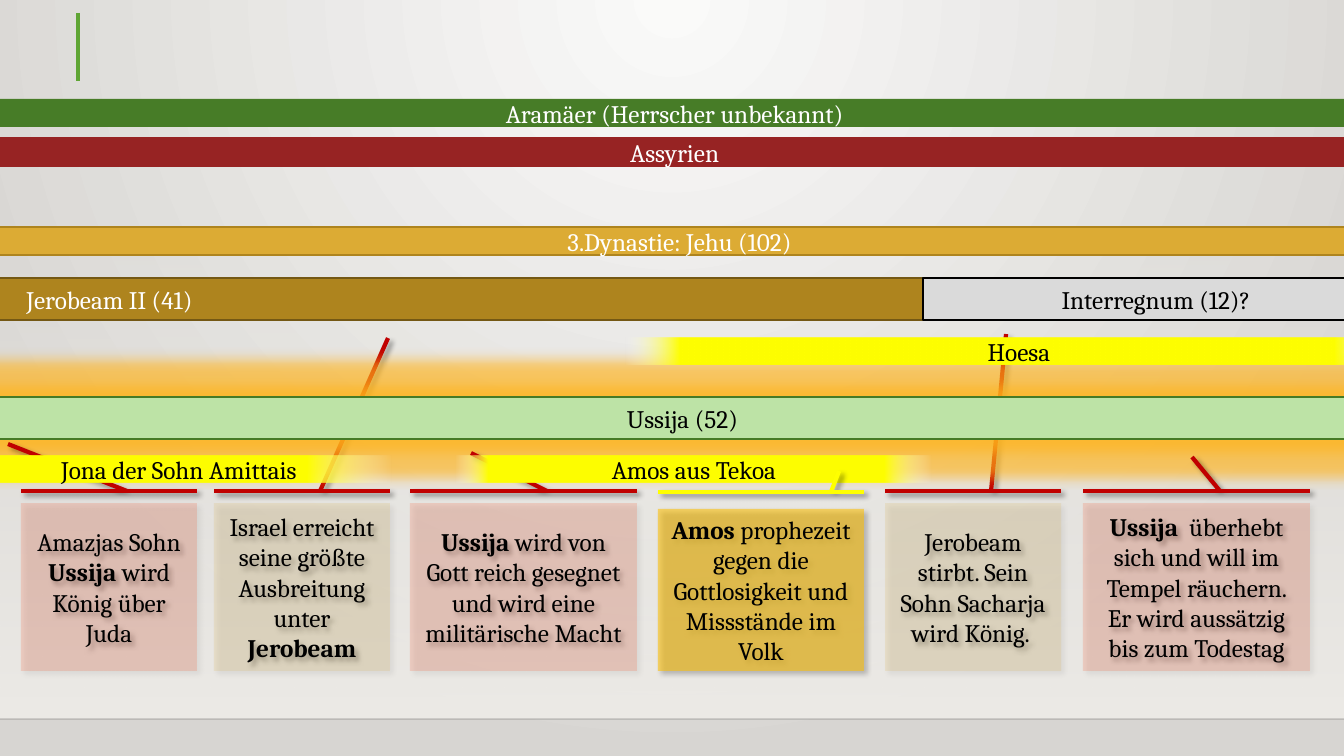
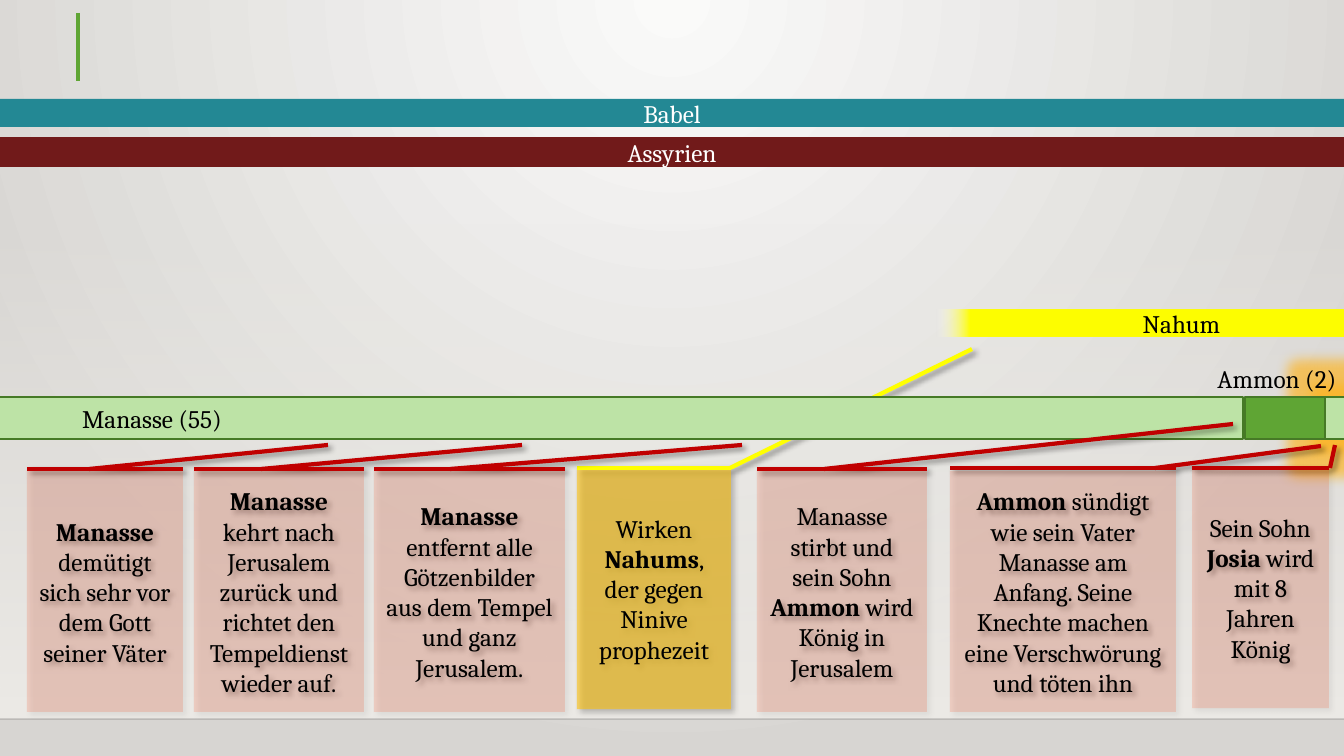
from dataclasses import dataclass

from lxml.etree import SubElement
from pptx import Presentation
from pptx.dml.color import RGBColor
from pptx.enum.shapes import MSO_CONNECTOR, MSO_SHAPE
from pptx.enum.text import MSO_ANCHOR, PP_ALIGN
from pptx.oxml import parse_xml
from pptx.oxml.ns import nsdecls, qn
from pptx.util import Pt

WIDTH, HEIGHT = 1344, 756
SCALE = 12192000 / WIDTH


@dataclass(frozen=True)
class Theme:
    font: str = "Cambria"
    text_size: float = 18
    bar_line: float = 1.25
    accent_line: float = 3
    black: str = "000000"
    white: str = "FFFFFF"
    background_light: str = "FAFAF9"
    background_dark: str = "D7D5D2"
    floor: str = "EDEBE7"
    green: str = "5FA534"
    green_dark: str = "467A26"
    green_light: str = "BDE3A6"
    aram: str = "477C27"
    assyria: str = "972323"
    assyria_dark: str = "711A1A"
    babylon: str = "238894"
    gold: str = "DCAB34"
    gold_dark: str = "AE841E"
    gold_edge: str = "745814"
    grey: str = "DADADA"
    yellow: str = "FFFF00"
    glow: str = "FFB31A"
    red: str = "C00000"


THEME = Theme()
JUDAH = ("FF3300", 15, THEME.red)
ISRAEL = (THEME.gold, 15, THEME.red)
PROPHET = ("FFC000", 56, THEME.yellow)

FADE_RIGHT = [(28, THEME.yellow, 100), (80, THEME.yellow, 100), (100, THEME.white, 0)]
FADE_BOTH = [(0, THEME.white, 0), (7, THEME.yellow, 100),
             (90, THEME.yellow, 100), (100, THEME.white, 0)]


def px(value):
    return round(value * SCALE)


def set_alpha(color_parent, percent):
    color = next(color_parent.iter(qn("a:srgbClr")))
    SubElement(color, qn("a:alpha")).set("val", str(percent * 1000))


def set_gradient(fill, holder, stops, direction):
    fill.gradient()
    stop_xml = "".join(
        f'<a:gs pos="{position * 1000}"><a:srgbClr val="{color}">'
        f'<a:alpha val="{alpha * 1000}"/></a:srgbClr></a:gs>'
        for position, color, alpha in stops)
    gradient = parse_xml(f'<a:gradFill {nsdecls("a")} rotWithShape="1">'
                         f"<a:gsLst>{stop_xml}</a:gsLst>{direction}</a:gradFill>")
    previous = holder.find(qn("a:gradFill"))
    holder.replace(previous, gradient)


def linear(degrees):
    return f'<a:lin ang="{degrees * 60000}" scaled="0"/>'


def add_effect(shape, effect):
    shape.element.spPr.find(qn("a:effectLst")).append(parse_xml(effect))


def write(shape, text, color):
    frame = shape.text_frame
    frame.word_wrap = True
    frame.vertical_anchor = MSO_ANCHOR.MIDDLE
    paragraph = frame.paragraphs[0]
    paragraph.alignment = PP_ALIGN.CENTER
    for index, part in enumerate(text.split("*")):
        if part:
            run = paragraph.add_run()
            run.text = part
            run.font.name = THEME.font
            run.font.size = Pt(THEME.text_size)
            run.font.bold = index % 2 == 1
            run.font.color.rgb = RGBColor.from_string(color)


def set_line(line, color, width):
    line.color.rgb = RGBColor.from_string(color)
    line.width = Pt(width)


def add_plain_shape(shapes, kind, box):
    shape = shapes.add_shape(kind, *map(px, box))
    shape.shadow.inherit = False
    shape.line.fill.background()
    return shape


def add_bar(shapes, box, fill, text="", color=THEME.white, line=None,
            kind=MSO_SHAPE.RECTANGLE):
    bar = add_plain_shape(shapes, kind, box)
    bar.fill.solid()
    bar.fill.fore_color.rgb = RGBColor.from_string(fill)
    if line:
        set_line(bar.line, line, THEME.bar_line)
    write(bar, text, color)
    return bar


def add_reign(shapes, left, width, text="", fill=THEME.green_light):
    return add_bar(shapes, (left, 397, width, 42), fill, text, THEME.black, THEME.green_dark)


def add_glow(shape):
    add_effect(shape, f'<a:glow {nsdecls("a")} rad="{px(25)}"><a:srgbClr val="{THEME.glow}">'
                      '<a:alpha val="65000"/></a:srgbClr></a:glow>')


def add_prophet(shapes, box, text, stops=FADE_BOTH):
    prophet = add_plain_shape(shapes, MSO_SHAPE.RECTANGLE, box)
    set_gradient(prophet.fill, prophet.element.spPr, stops, linear(0))
    write(prophet, text, THEME.black)


def add_event(shapes, style, box, start, tip, text):
    left, top, width, height = box
    fill, alpha, accent = style
    rotated = (left + (width - height) / 2, top + (height - width) / 2, height, width)
    event = add_plain_shape(shapes, MSO_SHAPE.LINE_CALLOUT_1_ACCENT_BAR, rotated)
    event.rotation = 90
    points = (start, tip)
    for index, (x, y) in enumerate(points):
        event.adjustments[2 * index] = (left + width - x) / width
        event.adjustments[2 * index + 1] = (y - top) / height
    event.fill.solid()
    event.fill.fore_color.rgb = RGBColor.from_string(fill)
    set_alpha(event.element.spPr.find(qn("a:solidFill")), alpha)
    set_line(event.line, accent, THEME.accent_line)
    add_effect(event, f'<a:outerShdw {nsdecls("a")} blurRad="{Pt(4)}" dist="{Pt(3)}" '
                      f'dir="2700000" algn="tl" rotWithShape="0"><a:srgbClr val="{THEME.black}">'
                      '<a:alpha val="40000"/></a:srgbClr></a:outerShdw>')
    write(event, text, THEME.black)
    event.text_frame._txBody.bodyPr.set("vert", "vert270")


def add_rule(shapes, start, end, color, width):
    rule = shapes.add_connector(MSO_CONNECTOR.STRAIGHT, *map(px, start + end))
    set_line(rule.line, color, width)
    SubElement(rule.element.spPr, qn("a:effectLst"))
    return rule


def decorate_master(master, slide):
    fill = master.background.fill
    fill.solid()
    stops = [(0, THEME.background_light, 100), (100, THEME.background_dark, 100)]
    holder = next(master.element.iter(qn("p:bgPr")))
    set_gradient(fill, holder, stops, '<a:path path="circle"><a:fillToRect l="43000" t="0" '
                                      'r="43000" b="100000"/></a:path>')
    floor = add_plain_shape(slide.shapes, MSO_SHAPE.RECTANGLE, (0, 222, WIDTH, 497))
    set_gradient(floor.fill, floor.element.spPr,
                 [(0, THEME.floor, 0), (100, THEME.floor, 100)], linear(90))
    edge = add_rule(slide.shapes, (0, 719), (WIDTH, 719), THEME.black, 1)
    set_alpha(edge.element.spPr.find(qn("a:ln")), 20)
    marker = add_rule(slide.shapes, (78, 13), (78, 81), THEME.green, THEME.accent_line)
    for shape in (floor, edge, marker):
        master.shapes.element.append(shape.element)


def build_ussija(shapes):
    top, height, start_y = 503, 168, 491
    add_event(shapes, ISRAEL, (885, top, 176, height), (991, start_y), (1006, 334),
              "Jerobeam stirbt. Sein Sohn Sacharja wird König. ")
    add_event(shapes, ISRAEL, (214, top, 176, height), (320, start_y), (388, 338),
              "Israel erreicht seine größte Ausbreitung unter *Jerobeam*")
    add_bar(shapes, (-704, 278, 1627, 42), THEME.gold_dark, "Jerobeam II (41)",
            line=THEME.gold_edge)
    add_glow(add_reign(shapes, -47, 1459, "Ussija (52)"))
    add_bar(shapes, (923, 278, 466, 42), THEME.grey, "Interregnum (12)?",
            THEME.black, THEME.black)
    add_bar(shapes, (-34, 213, 1441, 56), THEME.gold, "3.Dynastie: Jehu (102)",
            line=THEME.gold_dark, kind=MSO_SHAPE.RIGHT_ARROW)
    add_event(shapes, JUDAH, (21, top, 176, height), (127, start_y), (8, 444),
              "Amazjas Sohn *Ussija *wird König über Juda")
    add_bar(shapes, (-1, 99, 1357, 28), THEME.aram, "Aramäer (Herrscher unbekannt) ")
    add_bar(shapes, (-1, 138, 1357, 28), THEME.assyria, "Assyrien ", line=THEME.assyria)
    add_prophet(shapes, (-33, 456, 424, 27), "Jona der Sohn Amittais", FADE_RIGHT)
    add_event(shapes, JUDAH, (410, top, 227, height), (547, start_y), (471, 453),
              "*Ussija *wird von Gott reich gesegnet und wird eine militärische Macht")
    add_prophet(shapes, (456, 456, 476, 27), "Amos aus Tekoa")
    add_event(shapes, PROPHET, (658, 509, 206, 162), (831, 492), (839, 471),
              "*Amos* prophezeit gegen die Gottlosigkeit und Missstände im Volk")
    add_event(shapes, JUDAH, (1083, top, 227, height), (1220, start_y), (1192, 457),
              "*Ussija * überhebt sich und will im Tempel räuchern. "
              "Er wird aussätzig bis zum Todestag")
    add_prophet(shapes, (626, 338, 786, 27), "Hoesa")


def build_manasse(shapes):
    top, height, start_y = 471, 241, 469
    add_event(shapes, PROPHET, (577, 468, 154, height), (730, 468), (972, 349),
              "Wirken *Nahums*, der gegen Ninive prophezeit")
    add_reign(shapes, -939, 2182, "Manasse (55)")
    add_glow(add_reign(shapes, 1325, 46))
    ammon = shapes.add_group_shape().shapes
    add_reign(ammon, 1245, 80, fill=THEME.green)
    label = ammon.add_textbox(*map(px, (1202, 358, 150, 40)))
    write(label, "Ammon (2)", THEME.black)
    label.text_frame.word_wrap = False
    manasse_events = [
        (27, 156, 89, 328, "*Manasse *demütigt sich sehr vor dem Gott seiner Väter"),
        (194, 170, 261, 522, "*Manasse *kehrt nach Jerusalem zurück und richtet "
                             "den Tempeldienst wieder auf."),
        (374, 191, 450, 742, "*Manasse *entfernt alle Götzenbilder aus dem Tempel "
                             "und ganz Jerusalem."),
    ]
    for left, width, start_x, tip_x, text in manasse_events:
        add_event(shapes, JUDAH, (left, top, width, height), (start_x, start_y),
                  (tip_x, 445), text)
    add_event(shapes, JUDAH, (757, top, 170, height), (824, start_y), (1233, 424),
              "Manasse stirbt und sein Sohn *Ammon* wird König in Jerusalem")
    add_event(shapes, JUDAH, (950, top, 226, height), (1155, 468), (1321, 446),
              "*Ammon *sündigt wie sein Vater Manasse am Anfang. "
              "Seine Knechte machen eine Verschwörung und töten ihn")
    add_bar(shapes, (0, 138, WIDTH, 28), THEME.assyria_dark, "Assyrien",
            line=THEME.assyria_dark)
    add_bar(shapes, (0, 99, WIDTH, 28), THEME.babylon, "Babel")
    add_prophet(shapes, (937, 310, 489, 27), "Nahum")
    add_event(shapes, JUDAH, (1192, 467, 137, height), (1330, 468), (1335, 445),
              "Sein Sohn *Josia *wird mit 8 Jahren König")


def main():
    presentation = Presentation()
    presentation.slide_width = px(WIDTH)
    presentation.slide_height = px(HEIGHT)
    blank = presentation.slide_layouts[6]
    slides = [presentation.slides.add_slide(blank) for _ in range(2)]
    decorate_master(presentation.slide_master, slides[0])
    for slide, build in zip(slides, (build_ussija, build_manasse)):
        build(slide.shapes)
    presentation.save("out.pptx")


if __name__ == "__main__":
    main()
